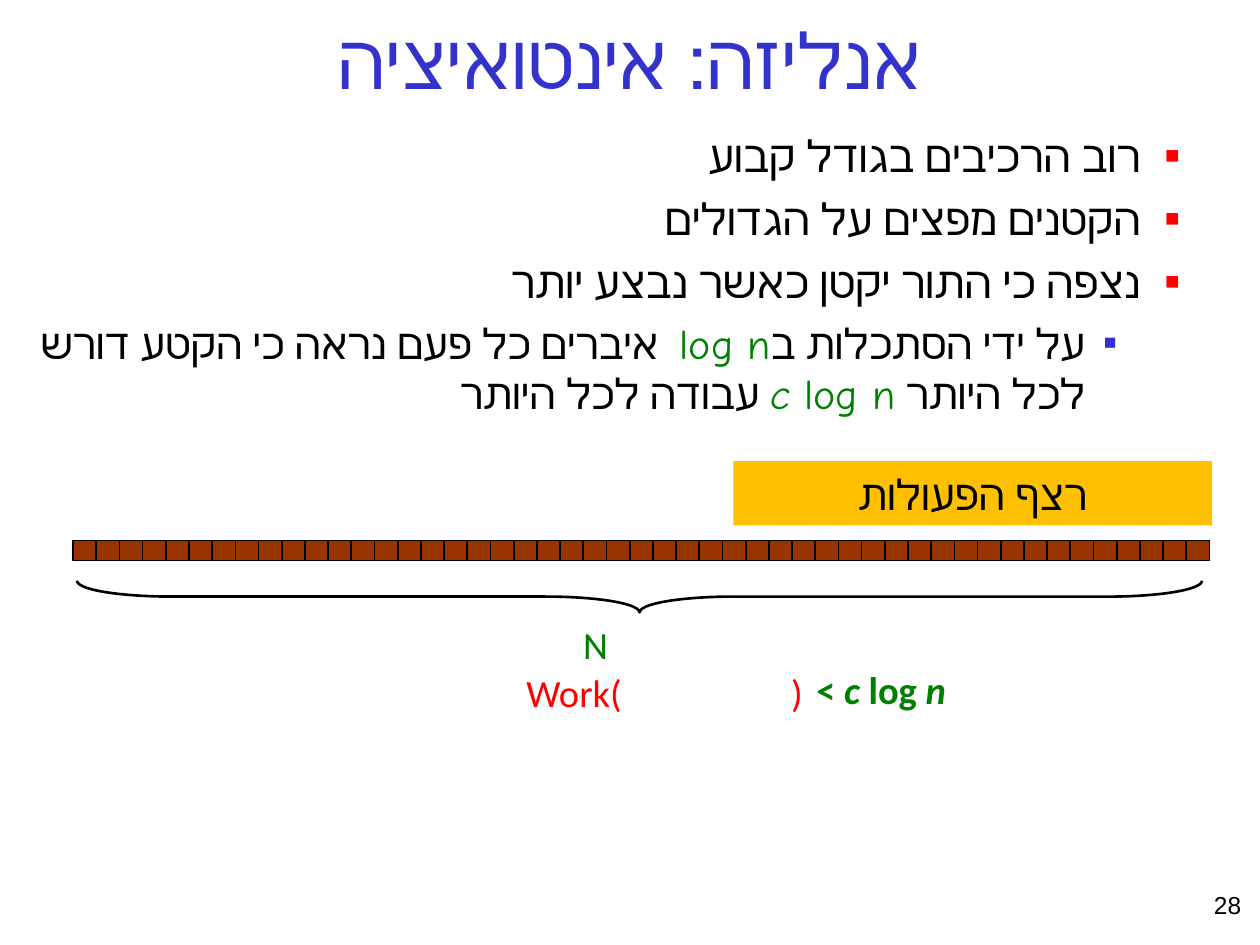
"""Build the slide on the intuition behind the analysis."""
from dataclasses import dataclass

from lxml.etree import SubElement
from pptx import Presentation
from pptx.dml.color import RGBColor
from pptx.enum.shapes import MSO_SHAPE
from pptx.enum.text import MSO_ANCHOR, MSO_AUTO_SIZE, PP_ALIGN
from pptx.oxml.ns import qn
from pptx.util import Inches, Pt


@dataclass(frozen=True)
class Theme:
    black: str = "000000"
    blue: str = "3333CC"
    red: str = "FF0000"
    green: str = "008000"
    brown: str = "993300"
    gold: str = "FFC000"
    head: int = 44
    point: int = 25
    sub: int = 24
    math: int = 22
    page: int = 14
    sans: str = "Arial"
    thin: str = "Arial Narrow"
    label: str = "Calibri"
    comic: str = "Comic Neue"


theme = Theme()


def add_run(para, text, size, font, color, bold=False, italic=False):
    run = para.add_run()
    run.text = text
    run.font.size = Pt(size)
    run.font.name = font
    run.font.color.rgb = RGBColor.from_string(color)
    run.font.bold = bold
    run.font.italic = italic


def add_box(left, top, width, height):
    box = slide.shapes.add_textbox(Inches(left), Inches(top), Inches(width), Inches(height))
    box.text_frame.word_wrap = True
    return box.text_frame


deck = Presentation()
deck.slide_width, deck.slide_height = Inches(10), Inches(7.5)
slide = deck.slides.add_slide(deck.slide_layouts[5])

title = slide.shapes.title
title.left, title.top = Inches(0.5), Inches(0.31)
title.width, title.height = Inches(9), Inches(0.57)
frame = title.text_frame
frame.auto_size = MSO_AUTO_SIZE.NONE
frame.vertical_anchor = MSO_ANCHOR.BOTTOM
para = frame.paragraphs[0]
para.alignment = PP_ALIGN.CENTER
add_run(para, "אנליזה: אינטואיציה", theme.head, theme.thin, theme.blue)

black = (theme.sub, theme.sans, theme.black)
green = (theme.sub, theme.comic, theme.green)
points = [
    (1, [("רוב הרכיבים בגודל קבוע", theme.point, theme.sans, theme.black)]),
    (1, [("הקטנים מפצים על הגדולים", theme.point, theme.sans, theme.black)]),
    (1, [("נצפה כי התור יקטן כאשר נבצע יותר", theme.point, theme.sans, theme.black)]),
    (2, [
        ("על ידי הסתכלות ב", *black),
        ("log n  ", *green),
        ("איברים כל פעם נראה כי הקטע דורש לכל היותר ", *black),
        ("c", *green, False, True),
        (" log n", *green),
        (" עבודה לכל היותר", *black),
    ]),
]
bullets = {1: (0.81, -0.31, theme.red, 55), 2: (1.25, -0.25, theme.blue, 50)}
frame = add_box(0.14, 0.44, 9.82, 3.43)
frame.margin_top = Inches(0.58)
for row, (level, runs) in enumerate(points):
    para = frame.add_paragraph() if row else frame.paragraphs[0]
    para.level = level
    para.alignment = PP_ALIGN.RIGHT
    para.space_before = Pt(6 if row else 0)
    margin, indent, color, scale = bullets[level]
    props = para._p.get_or_add_pPr()
    props.set("marL", str(Inches(margin)))
    props.set("indent", str(Inches(indent)))
    props.set("rtl", "1")
    SubElement(SubElement(props, qn("a:buClr")), qn("a:srgbClr"), val=color)
    SubElement(props, qn("a:buSzPct"), val=str(scale * 1000))
    SubElement(props, qn("a:buFont"), typeface=theme.sans)
    SubElement(props, qn("a:buChar"), char="■")
    for run in runs:
        add_run(para, *run)

pitch = 9.02 / 49
for block in range(7):
    group = slide.shapes.add_group_shape()
    for step in range(7):
        left = 0.58 + (block * 7 + step) * pitch
        cell = group.shapes.add_shape(
            MSO_SHAPE.RECTANGLE, Inches(left), Inches(4.29), Inches(pitch), Inches(0.16))
        cell.shadow.inherit = False
        cell.fill.solid()
        cell.fill.fore_color.rgb = RGBColor.from_string(theme.brown)
        cell.line.color.rgb = RGBColor.from_string(theme.black)
        cell.line.width = Pt(1)

brace = slide.shapes.add_shape(
    MSO_SHAPE.RIGHT_BRACE, Inches(4.95), Inches(0.27), Inches(0.25), Inches(8.93))
brace.rotation = 90
brace.adjustments[0] = 2.98
brace.adjustments[1] = 0.5
brace.shadow.inherit = False
brace.fill.background()
brace.line.color.rgb = RGBColor.from_string(theme.black)
brace.line.width = Pt(1.5)

frame = add_box(4.53, 4.88, 1.08, 0.47)
add_run(frame.paragraphs[0], "N", theme.math, theme.label, theme.green)

para = add_box(6.38, 5.24, 1.35, 0.47).paragraphs[0]
for text, italic in [("< ", False), ("c", True), (" log ", False), ("n", True)]:
    add_run(para, text, theme.math, theme.label, theme.green, True, italic)

para = add_box(4.08, 5.26, 4.72, 0.47).paragraphs[0]
tabs = SubElement(para._p.get_or_add_pPr(), qn("a:tabLst"))
SubElement(tabs, qn("a:tab"), pos=str(Inches(2.1)), algn="l")
add_run(para, "Work(\t)", theme.math, theme.label, theme.red)

banner = slide.shapes.add_shape(
    MSO_SHAPE.RECTANGLE, Inches(5.82), Inches(3.66), Inches(3.8), Inches(0.51))
banner.shadow.inherit = False
banner.fill.solid()
banner.fill.fore_color.rgb = RGBColor.from_string(theme.gold)
banner.line.fill.background()
para = banner.text_frame.paragraphs[0]
para.alignment = PP_ALIGN.CENTER
add_run(para, "רצף הפעולות", *black)

frame = add_box(7.62, 7.07, 2.33, 0.28)
frame.vertical_anchor = MSO_ANCHOR.BOTTOM
para = frame.paragraphs[0]
para.alignment = PP_ALIGN.RIGHT
add_run(para, "28", theme.page, theme.sans, theme.black)

deck.save("out.pptx")
